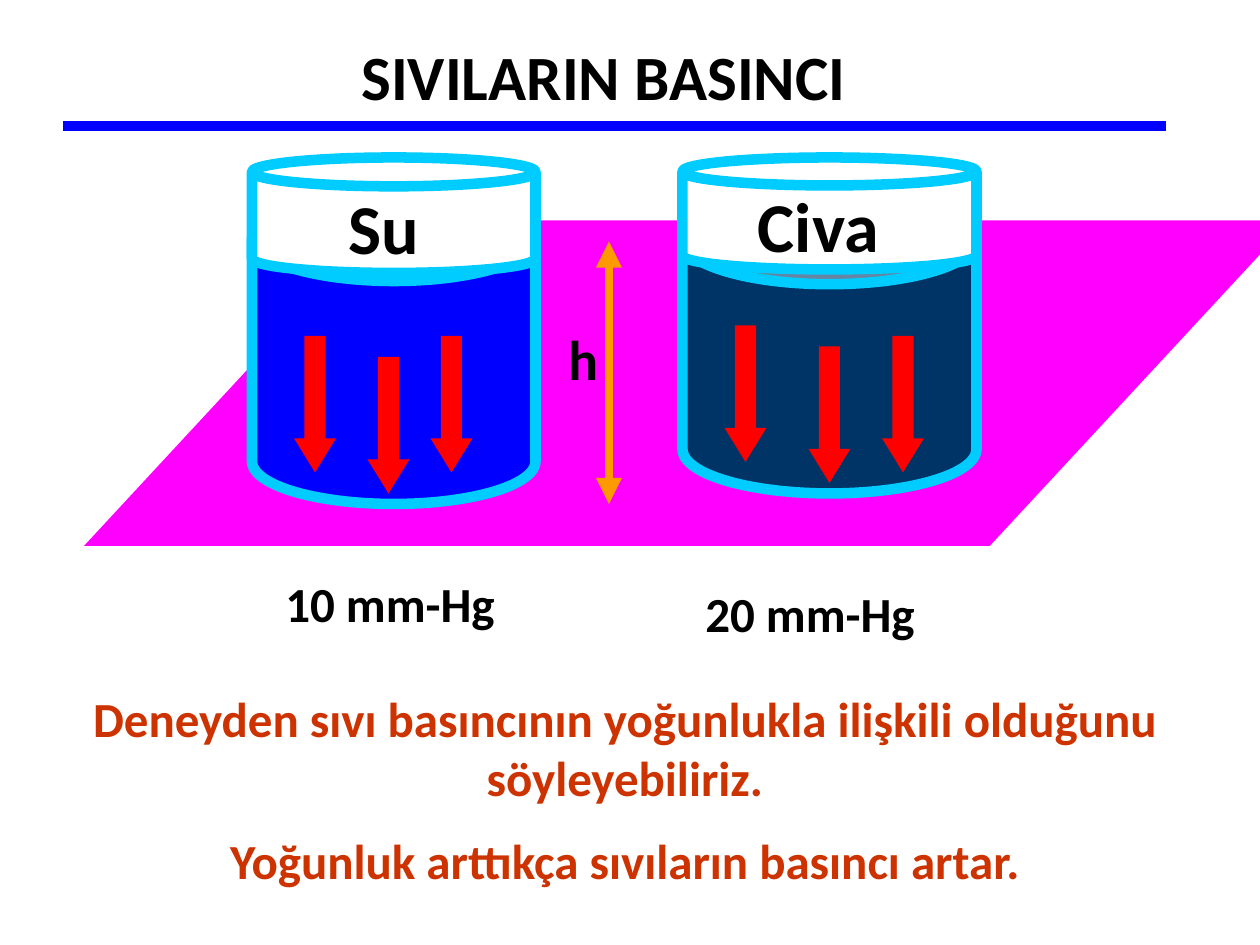
from lxml.etree import SubElement
from pptx import Presentation
from pptx.dml.color import RGBColor
from pptx.enum.shapes import MSO_CONNECTOR as Connector, MSO_SHAPE as Shape
from pptx.enum.text import MSO_AUTO_SIZE as AutoSize, PP_ALIGN as Align
from pptx.oxml.ns import qn
from pptx.util import Pt

COLORS = {
    "text": "000000", "conclusion": "CC3300", "rule": "0000FF",
    "table": "FF00FF", "glass": "00CCFF", "empty": "FFFFFF",
    "water": "0000FF", "mercury": "003366", "pressure": "FF0000",
    "height": "FF9900",
}


def color(name):
    return RGBColor.from_string(COLORS[name])


def points(*values):
    return [Pt(value) for value in values]


def add_text(slide, box, lines, size, ink="text", align=Align.LEFT):
    frame = slide.shapes.add_textbox(*points(*box)).text_frame
    frame.word_wrap = True
    frame.auto_size = AutoSize.SHAPE_TO_FIT_TEXT
    font_format = {"name": "Calibri", "size": Pt(size), "bold": True}
    for index, line in enumerate(lines):
        paragraph = frame.paragraphs[0] if index == 0 else frame.add_paragraph()
        paragraph.alignment = align
        paragraph.space_before = Pt(size / 2 if index else 0)
        run = paragraph.add_run()
        run.text = line
        for name, value in font_format.items():
            setattr(run.font, name, value)
        run.font.color.rgb = color(ink)


def add_solid(shapes, kind, box, fill, adjustments, outline=None):
    shape = shapes.add_shape(kind, *points(*box))
    shape.shadow.inherit = False
    shape.fill.solid()
    shape.fill.fore_color.rgb = color(fill)
    for index, value in enumerate(adjustments):
        shape.adjustments[index] = value
    if outline:
        shape.line.color.rgb = color(outline)
        shape.line.width = Pt(6)
    else:
        shape.line.fill.background()


def add_line(slide, ends, ink, width, arrows=()):
    line = slide.shapes.add_connector(Connector.STRAIGHT, *points(*ends))
    line.line.color.rgb = color(ink)
    line.line.width = Pt(width)
    outline = line.line._get_or_add_ln()
    for end in arrows:
        SubElement(outline, qn(f"a:{end}"), type="triangle")
    SubElement(line._element.spPr, qn("a:effectLst"))


def add_header(slide, box):
    left, top, width, height = box
    add_text(slide, (left + 6, top, 606, 51), ["SIVILARIN BASINCI"], 36, align=Align.CENTER)
    add_line(slide, (left, top + height, left + width, top + height), "rule", 6)


def add_vessel(slide, box, liquid, empty_height, arrow_offsets):
    left, top, width, height = box
    surface = 22
    glass = slide.shapes.add_group_shape().shapes
    add_solid(glass, Shape.CAN, (left, top + surface, width, height - surface),
              liquid, [0.3], "glass")
    add_solid(glass, Shape.CAN, (left, top, width, empty_height), "empty", [0.25], "glass")
    arrows = slide.shapes.add_group_shape().shapes
    for across, down in arrow_offsets:
        add_solid(arrows, Shape.DOWN_ARROW, (left + across, top + down, 24, 78),
                  "pressure", [0.5, 0.812])


def add_height_mark(slide, box):
    left, top, width, height = box
    right = left + width
    add_line(slide, (right, top, right, top + height), "height", 5, ("headEnd", "tailEnd"))
    add_text(slide, (left, top + 44, 36, 45), ["h"], 32)


def add_experiment(slide, box):
    left, top, width, height = box
    add_solid(slide.shapes, Shape.PARALLELOGRAM,
              (left, top + 36, width, height - 36), "table", [0.927])
    add_vessel(slide, (left + 96, top, 162, 198), "water", 66,
               [(66, 114), (102, 102), (24, 102)])
    add_vessel(slide, (left + 342, top, 168, 192), "mercury", 64,
               [(72, 108), (24, 96), (114, 102)])
    add_height_mark(slide, (left + 270, top + 48, 30, 150))
    add_text(slide, (left + 144, top + 12, 66, 55), ["Su"], 40)
    add_text(slide, (left + 378, top + 11, 102, 55), ["Civa"], 40)


def add_readings(slide, box):
    left, top, width, height = box
    add_text(slide, (left, top, 174, height), ["10 mm-Hg"], 28)
    add_text(slide, (left + width - 174, top + 6, 174, height), ["20 mm-Hg"], 28)


def add_conclusion(slide, box):
    add_text(slide, box, [
        "Deneyden sıvı basıncının yoğunlukla ilişkili olduğunu söyleyebiliriz.",
        "Yoğunluk arttıkça sıvıların basıncı artar.",
    ], 28, "conclusion", Align.CENTER)


def main():
    presentation = Presentation()
    presentation.slide_width, presentation.slide_height = points(720, 540)
    slide = presentation.slides.add_slide(presentation.slide_layouts[6])
    add_header(slide, (36, 18, 630, 54))
    add_experiment(slide, (48, 90, 690, 222))
    add_readings(slide, (156, 324, 414, 41))
    add_conclusion(slide, (42, 390, 630, 126))
    presentation.save("out.pptx")


if __name__ == "__main__":
    main()
